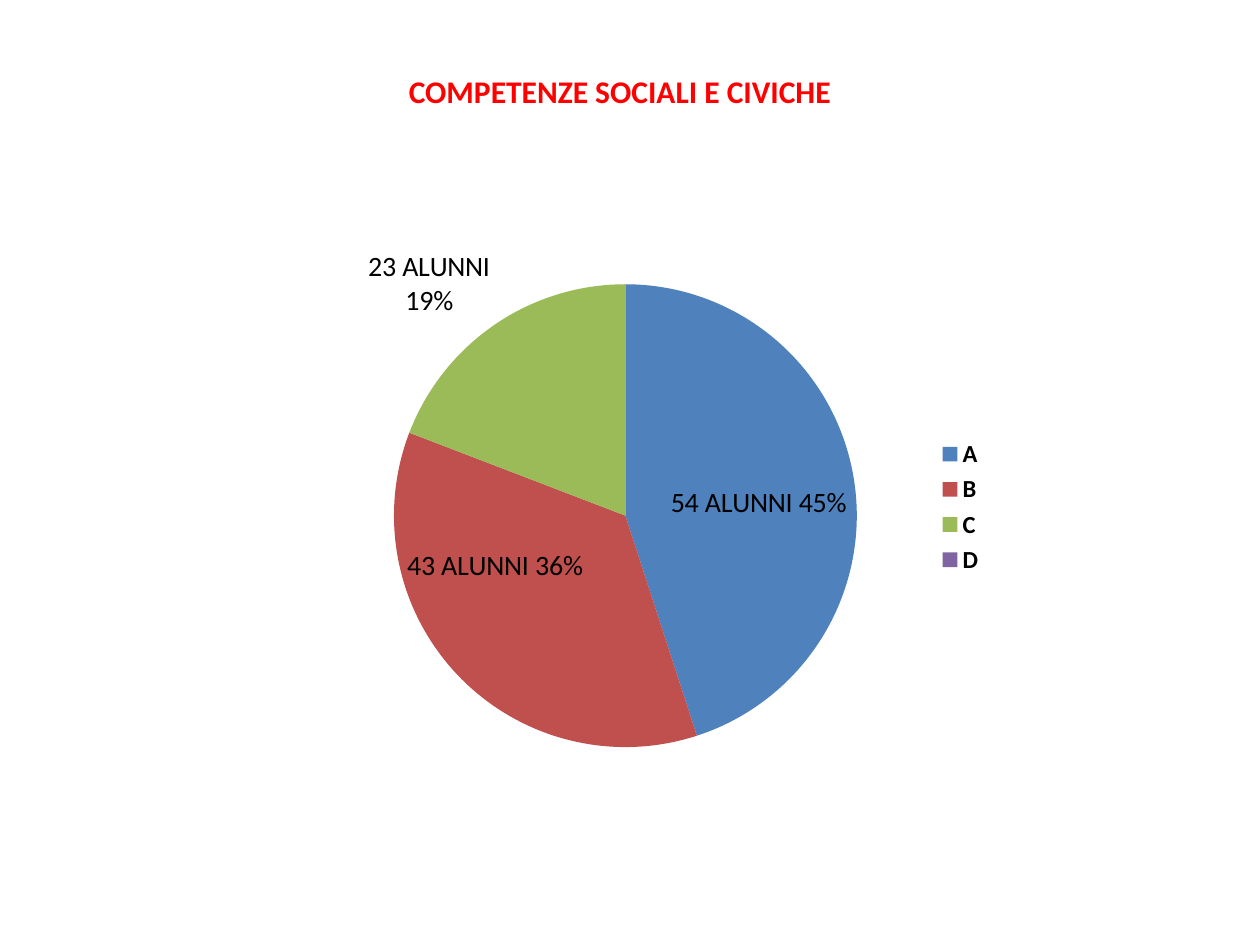
from dataclasses import dataclass

from lxml import etree
from pptx import Presentation
from pptx.chart.data import CategoryChartData
from pptx.dml.color import RGBColor
from pptx.enum.chart import XL_CHART_TYPE, XL_LABEL_POSITION, XL_LEGEND_POSITION
from pptx.enum.text import PP_ALIGN
from pptx.oxml.ns import qn
from pptx.util import Emu, Pt

PIE = XL_CHART_TYPE.PIE
RIGHT = XL_LEGEND_POSITION.RIGHT
CENTER = PP_ALIGN.CENTER
INSIDE = XL_LABEL_POSITION.INSIDE_END
MIDDLE = XL_LABEL_POSITION.CENTER
OUTSIDE = XL_LABEL_POSITION.OUTSIDE_END
EMU_PER_PX = 914400 // 126


@dataclass(frozen=True)
class Theme:
    font: str = "Calibri"
    title_color: str = "FF0000"
    text_color: str = "000000"
    slices: tuple = ("4F81BD", "C0504D", "9BBB59", "8064A2")
    title_size: int = 18
    label_size: int = 16
    legend_size: int = 14
    chart_size: int = 10


def px(length):
    return Emu(length * EMU_PER_PX)


def manual_layout(**settings):
    layout = etree.Element(qn("c:layout"))
    manual = etree.SubElement(layout, qn("c:manualLayout"))
    for name, value in settings.items():
        etree.SubElement(manual, qn(f"c:{name}")).set("val", str(value))
    return layout


class PageBuilder:
    def __init__(self, page, theme):
        self.page = page
        self.theme = theme

    def style(self, font, size, color, bold=False):
        font.name = self.theme.font
        font.size = Pt(size)
        font.bold = bold
        font.color.rgb = RGBColor.from_string(color)

    def title(self, text, left, top, width, height):
        box = self.page.shapes.add_textbox(px(left), px(top), px(width), px(height))
        box.text_frame.word_wrap = True
        para = box.text_frame.paragraphs[0]
        para.alignment = CENTER
        span = para.add_run()
        span.text = text
        self.style(span.font, self.theme.title_size, self.theme.title_color, True)

    def pie(self, categories, values, left, top, width, height):
        data = CategoryChartData()
        data.categories = categories
        data.add_series("Series 1", values)
        frame = self.page.shapes.add_chart(
            PIE, px(left), px(top), px(width), px(height), data
        )
        chart = frame.chart
        chart.has_title = False
        self.style(chart.font, self.theme.chart_size, self.theme.text_color)
        chart.has_legend = True
        chart.legend.position = RIGHT
        chart.legend.include_in_layout = False
        self.style(
            chart.legend.font, self.theme.legend_size, self.theme.text_color, True
        )
        plot_area = chart.plots[0]._element.getparent()
        for layout in plot_area.findall(qn("c:layout")):
            plot_area.remove(layout)
        plot_area.insert(0, manual_layout(
            layoutTarget="inner", xMode="edge", yMode="edge",
            x=0.22, y=0.12, w=0.6, h=0.79,
        ))
        series = chart.plots[0].series[0]
        for index, color in enumerate(self.theme.slices):
            fill = series.points[index].format.fill
            fill.solid()
            fill.fore_color.rgb = RGBColor.from_string(color)
        labels = series.data_labels
        labels.show_value = True
        labels.show_percentage = True
        self.style(labels.font, self.theme.label_size, self.theme.text_color, True)
        return series

    def slice_label(self, series, index, text, position, shift=None):
        label = series.points[index].data_label
        span = label.text_frame.paragraphs[0].add_run()
        span.text = text
        self.style(span.font, self.theme.label_size, self.theme.text_color)
        label.position = position
        entry = series._element.find(f".//{qn('c:dLbl')}[{index + 1}]")
        entry.find(qn("c:showPercent")).set("val", "1")
        if shift:
            entry.insert(1, manual_layout(x=shift[0], y=shift[1]))


def main():
    deck = Presentation()
    deck.slide_width, deck.slide_height = px(1260), px(945)
    page = deck.slides.add_slide(deck.slide_layouts[6])
    builder = PageBuilder(page, Theme())
    builder.title("COMPETENZE SOCIALI E CIVICHE", 273, 66, 694, 50)
    pupils = builder.pie(tuple("ABCD"), (54, 43, 23, None), 223, 214, 774, 586)
    builder.slice_label(pupils, 0, "54 ALUNNI 45%", INSIDE, (0, 0.01))
    builder.slice_label(pupils, 1, "43 ALUNNI 36%", MIDDLE, (-0.06, -0.05))
    builder.slice_label(pupils, 2, "23 ALUNNI 19%", OUTSIDE)
    deck.save("out.pptx")


if __name__ == "__main__":
    main()
